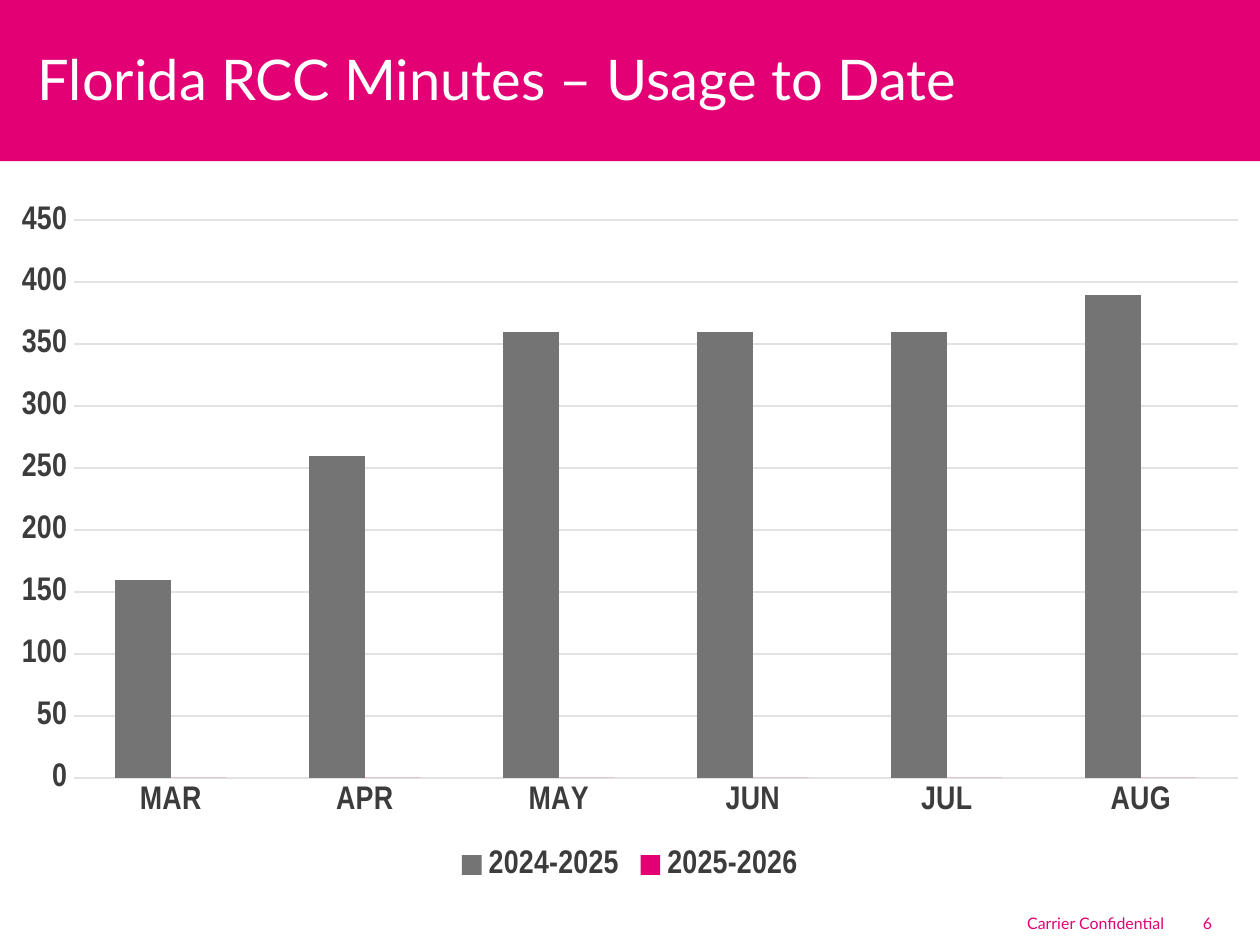
from dataclasses import dataclass

from lxml import etree
from pptx import Presentation
from pptx.chart.data import CategoryChartData
from pptx.dml.color import RGBColor as RGB
from pptx.enum.chart import XL_CHART_TYPE as ChartType
from pptx.enum.chart import XL_LEGEND_POSITION as LegendPos
from pptx.enum.chart import XL_TICK_MARK as Tick
from pptx.enum.shapes import MSO_SHAPE as Shape
from pptx.enum.text import MSO_ANCHOR as Anchor
from pptx.enum.text import MSO_AUTO_SIZE as AutoSize
from pptx.enum.text import PP_ALIGN as Align
from pptx.oxml.ns import qn
from pptx.util import Inches, Pt

WIDTH = 7.5
HEIGHT = WIDTH * 3 / 4


@dataclass(frozen=True)
class Theme:
    accent: RGB = RGB.from_string("E20074")
    bar: RGB = RGB.from_string("747474")
    ink: RGB = RGB.from_string("3C3C3C")
    grid: RGB = RGB.from_string("E2E2E2")
    white: RGB = RGB.from_string("FFFFFF")
    text_font: str = "Lato"
    chart_font: str = "Arial Narrow"
    title_size: float = 24
    chart_size: float = 14
    footer_size: float = 6.8


THEME = Theme()
MONTHS = ["MAR", "APR", "MAY", "JUN", "JUL", "AUG"]
USAGE = [
    ("2024-2025", [160, 260, 360, 360, 360, 390], THEME.bar),
    ("2025-2026", [0] * len(MONTHS), THEME.accent),
]
PLOT_PERCENT = {"x": 6.1, "y": 4.3, "w": 91.9, "h": 80}


def box(x, y, w, h):
    return [Inches(side * percent / 100) for side, percent in
            zip((WIDTH, HEIGHT, WIDTH, HEIGHT), (x, y, w, h))]


def assign(target, values):
    for name, value in values.items():
        setattr(target, name, value)


def style_font(font, size, color, name, bold=False):
    assign(font, {"size": Pt(size), "name": name, "bold": bold})
    font.color.rgb = color


def write(sp, text, size, color, align=Align.LEFT, inset=(0.06, 0.03)):
    tf = sp.text_frame
    side, top = map(Inches, inset)
    assign(tf, {
        "word_wrap": True, "auto_size": AutoSize.NONE,
        "vertical_anchor": Anchor.MIDDLE,
        "margin_left": side, "margin_right": side,
        "margin_top": top, "margin_bottom": top,
    })
    p = tf.paragraphs[0]
    p.alignment = align
    r = p.add_run()
    r.text = text
    style_font(r.font, size, color, THEME.text_font)


def add_header(s, text):
    band = s.shapes.add_shape(Shape.RECTANGLE, *box(0, 0, 100, 17.07))
    band.shadow.inherit = False
    band.fill.solid()
    band.fill.fore_color.rgb = THEME.accent
    band.line.fill.background()
    title = s.shapes.title
    title._element.addprevious(band._element)
    frame = box(1.93, 2.9, 96.53, 10.67)
    assign(title, dict(zip(("left", "top", "width", "height"), frame)))
    write(title, text, THEME.title_size, THEME.white, inset=(0.08, 0.04))


def add_footer(s, text, x, w, align):
    sp = s.shapes.add_textbox(*box(x, 96.18, w, 3.02))
    write(sp, text, THEME.footer_size, THEME.accent, align)


def place_plot(chart):
    area = chart._chartSpace.chart.plotArea
    for old in area.findall(qn("c:layout")):
        area.remove(old)
    layout = etree.Element(qn("c:layout"))
    area.insert(0, layout)
    manual = etree.SubElement(layout, qn("c:manualLayout"))
    settings = {"layoutTarget": "inner", "xMode": "edge", "yMode": "edge"}
    settings |= {tag: percent / 100 for tag, percent in PLOT_PERCENT.items()}
    for tag, value in settings.items():
        etree.SubElement(manual, qn(f"c:{tag}"), val=str(value))


def style_axis(axis):
    assign(axis, {"major_tick_mark": Tick.NONE, "minor_tick_mark": Tick.NONE})
    axis.format.line.fill.background()
    style_font(axis.tick_labels.font, THEME.chart_size, THEME.ink,
               THEME.chart_font, True)


def add_usage_chart(s):
    data = CategoryChartData(number_format="#,##0")
    data.categories = MONTHS
    for name, values, _ in USAGE:
        data.add_series(name, values)
    chart = s.shapes.add_chart(ChartType.COLUMN_CLUSTERED,
                               *box(-0.27, 20.15, 100.53, 73.78), data).chart
    assign(chart, {"has_title": False, "has_legend": True})
    style_font(chart.font, 10, THEME.ink, THEME.text_font)
    assign(chart.legend, {"position": LegendPos.BOTTOM,
                          "include_in_layout": False})
    style_font(chart.legend.font, THEME.chart_size, THEME.ink,
               THEME.chart_font, True)

    plot = chart.plots[0]
    assign(plot, {"gap_width": 150, "overlap": 0, "vary_by_categories": False})
    for series, (_, _, color) in zip(plot.series, USAGE):
        series.format.fill.solid()
        series.format.fill.fore_color.rgb = color

    for axis in (chart.category_axis, chart.value_axis):
        style_axis(axis)
    value_axis = chart.value_axis
    assign(value_axis, {"minimum_scale": 0, "maximum_scale": 450,
                        "major_unit": 50, "has_major_gridlines": True})
    assign(value_axis.tick_labels, {"number_format": "#,##0",
                                    "number_format_is_linked": False})
    line = value_axis.major_gridlines.format.line
    line.width = Pt(0.75)
    line.color.rgb = THEME.grid
    place_plot(chart)


def main():
    prs = Presentation()
    assign(prs, {"slide_width": Inches(WIDTH), "slide_height": Inches(HEIGHT)})
    s = prs.slides.add_slide(prs.slide_layouts[5])
    add_header(s, "Florida RCC Minutes – Usage to Date")
    add_usage_chart(s)
    add_footer(s, "Carrier Confidential", 61.47, 31.73, Align.RIGHT)
    add_footer(s, "6", 94.67, 5.07, Align.LEFT)
    prs.save("out.pptx")


if __name__ == "__main__":
    main()
